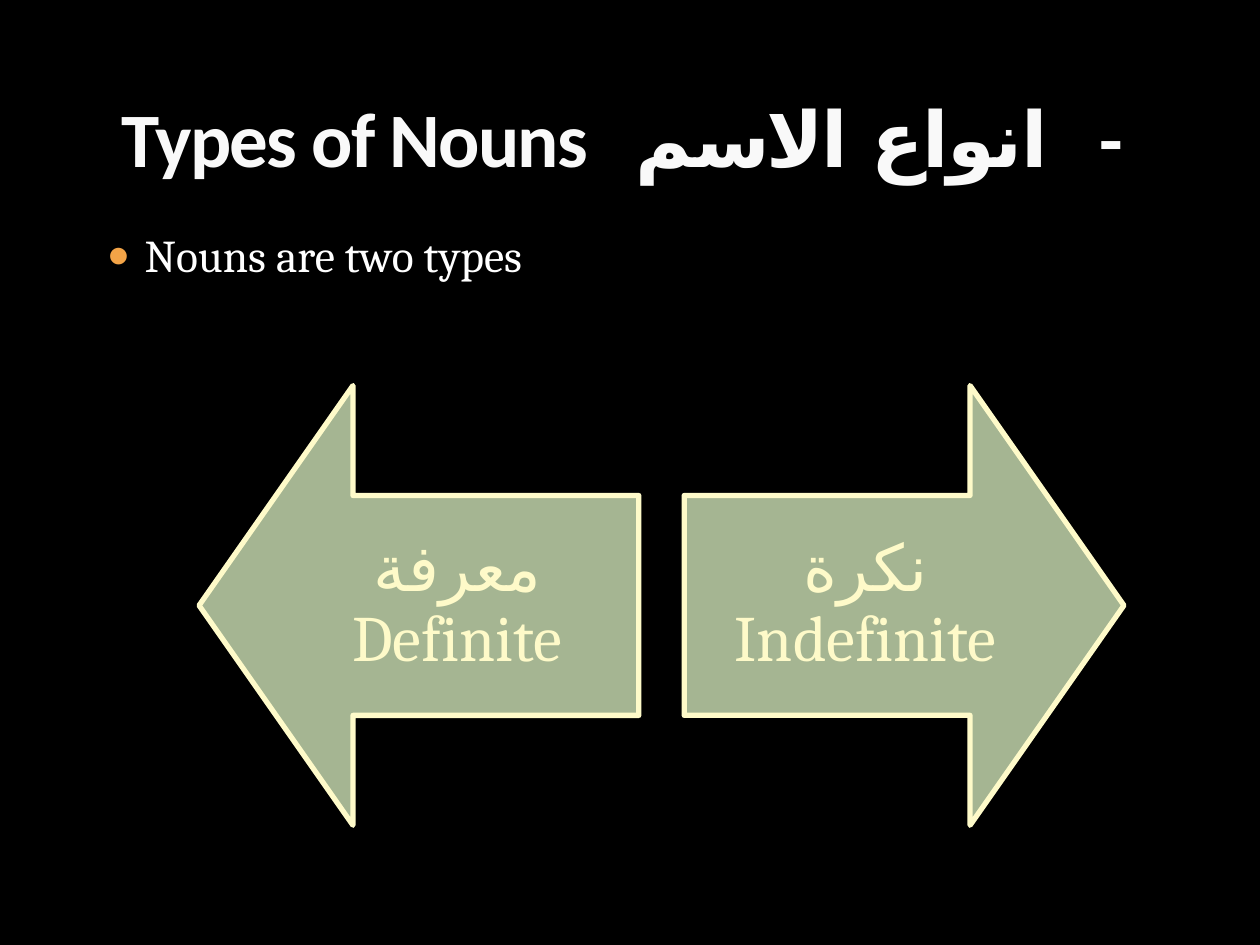
from dataclasses import dataclass

from lxml.etree import SubElement
from pptx import Presentation
from pptx.dml.color import RGBColor
from pptx.enum.shapes import MSO_SHAPE
from pptx.enum.text import MSO_ANCHOR, MSO_AUTO_SIZE, PP_ALIGN
from pptx.oxml import parse_xml
from pptx.oxml.ns import nsdecls, qn
from pptx.util import Inches, Pt

COLORS = {
    "background": "000000",
    "title": "F9F9F9",
    "title_outline": "3C4422",
    "body": "FFFFFF",
    "bullet": "F3A447",
    "arrow": "A5B592",
    "cream": "FEFAC9",
}
ARABIC_FONT = "DejaVu Sans"
ARROW_SIZE, ARROW_TOP = 3.49, 3.06
LABEL_W, LABEL_H = 2.88, 1.75


@dataclass
class NounType:
    text: str
    arrow_left: float
    label_left: float
    rotation: int


NOUN_TYPES = [
    NounType("معرفة Definite", 1.58, 2.19, 270),
    NounType("نكرة Indefinite", 5.43, 5.43, 90),
]


def rgb(name: str) -> RGBColor:
    return RGBColor.from_string(COLORS[name])


def add_run(p, text: str, font: str, size: float, color: str, bold: bool = False):
    r = p.add_run()
    r.text = text
    r.font.name, r.font.size, r.font.bold = font, Pt(size), bold
    r.font.color.rgb = rgb(color)
    # Complex-script font for the Arabic words
    SubElement(r._r.get_or_add_rPr(), qn("a:cs"), typeface=ARABIC_FONT)
    return r


def add_bullet(p, char: str, color: str, percent: int) -> None:
    pPr = p._p.get_or_add_pPr()
    pPr.set("marL", str(Inches(0.3)))
    pPr.set("indent", str(Inches(-0.3)))
    clr = SubElement(pPr, qn("a:buClr"))
    SubElement(clr, qn("a:srgbClr"), val=COLORS[color])
    SubElement(pPr, qn("a:buSzPct"), val=str(percent * 1000))
    SubElement(pPr, qn("a:buFont"), typeface="Arial")
    SubElement(pPr, qn("a:buChar"), char=char)


def add_noun_type(shapes, noun: NounType) -> None:
    # Arrow
    arrow = shapes.add_shape(
        MSO_SHAPE.UP_ARROW, Inches(noun.arrow_left), Inches(ARROW_TOP),
        Inches(ARROW_SIZE), Inches(ARROW_SIZE))
    arrow.rotation = noun.rotation
    arrow.adjustments[0], arrow.adjustments[1] = 0.5, 0.35
    arrow.shadow.inherit = False
    arrow.fill.solid()
    arrow.fill.fore_color.rgb = rgb("arrow")
    arrow.line.color.rgb = rgb("cream")
    arrow.line.width = Pt(3)

    # Upright label over the shaft
    label_top = ARROW_TOP + (ARROW_SIZE - LABEL_H) / 2
    label = shapes.add_textbox(
        Inches(noun.label_left), Inches(label_top), Inches(LABEL_W), Inches(LABEL_H))
    tf = label.text_frame
    tf.word_wrap = True
    tf.vertical_anchor = MSO_ANCHOR.MIDDLE
    tf.margin_left = tf.margin_right = tf.margin_top = tf.margin_bottom = Inches(0.29)
    p = tf.paragraphs[0]
    p.alignment = PP_ALIGN.CENTER
    p.line_spacing = 0.9
    add_run(p, noun.text, "Cambria", 37, "cream")


def main() -> None:
    prs = Presentation()
    prs.slide_width, prs.slide_height = Inches(10), Inches(7.5)
    s = prs.slides.add_slide(prs.slide_layouts[5])
    s.background.fill.solid()
    s.background.fill.fore_color.rgb = rgb("background")

    # Title
    title = s.shapes.title
    title.left, title.top = Inches(0.5), Inches(0.17)
    title.width, title.height = Inches(9), Inches(1.33)
    tf = title.text_frame
    tf.auto_size = MSO_AUTO_SIZE.NONE
    tf.vertical_anchor = MSO_ANCHOR.BOTTOM
    p = tf.paragraphs[0]
    p.alignment = PP_ALIGN.CENTER
    r = add_run(p, "Types of Nouns   انواع الاسم  - ", "Calibri", 44, "title", True)
    rPr = r._r.get_or_add_rPr()
    rPr.set("spc", "-100")
    rPr.insert(0, parse_xml(
        f'<a:ln {nsdecls("a")} w="{Pt(0.25)}"><a:solidFill>'
        f'<a:srgbClr val="{COLORS["title_outline"]}"><a:alpha val="25000"/></a:srgbClr>'
        '</a:solidFill></a:ln>'))

    # Bullet text
    body = s.shapes.add_textbox(Inches(0.75), Inches(1.75), Inches(8.5), Inches(0.67))
    body.text_frame.word_wrap = True
    p = body.text_frame.paragraphs[0]
    p.space_before = Pt(6)
    add_bullet(p, "●", "bullet", 85)
    add_run(p, "Nouns are two types", "Cambria", 26, "body")

    # Opposing arrows
    group = s.shapes.add_group_shape()
    for noun in NOUN_TYPES:
        add_noun_type(group.shapes, noun)

    prs.save("out.pptx")


if __name__ == "__main__":
    main()
